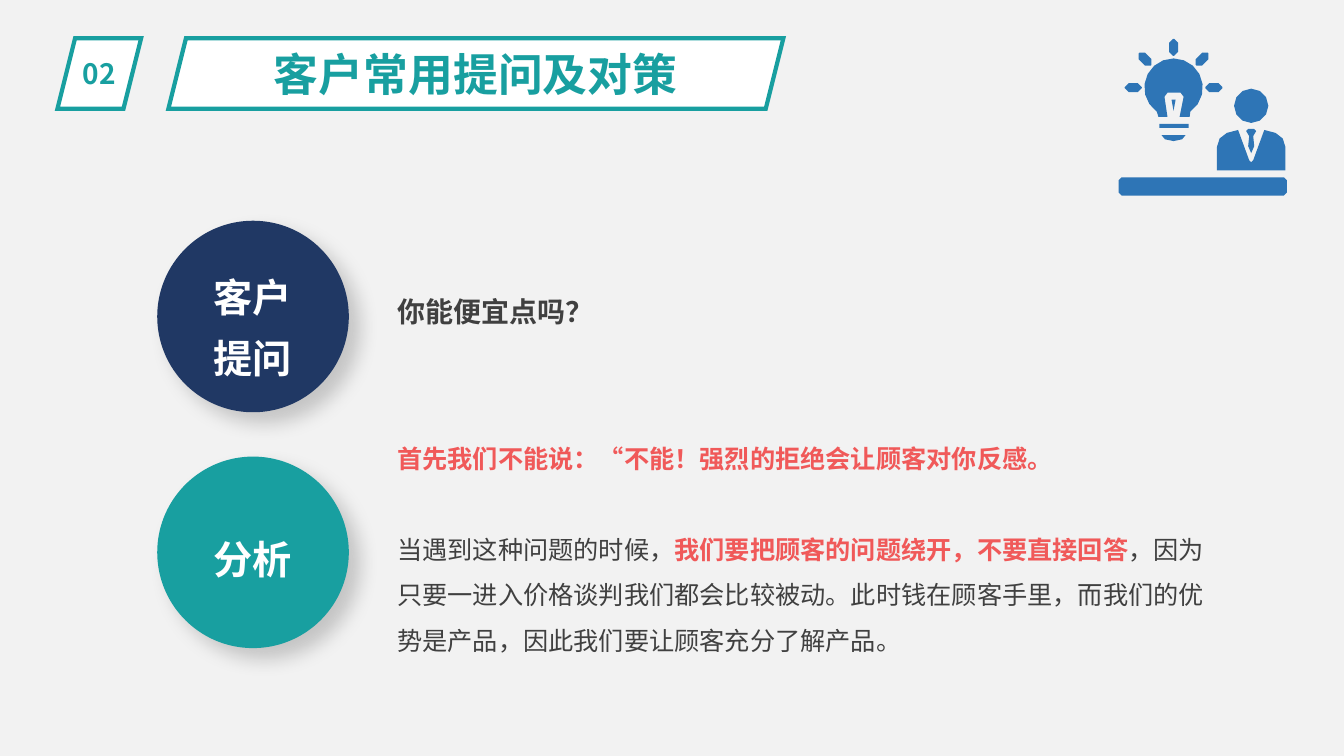
"""Build a slide on a common customer question and how to answer it."""
import math
from dataclasses import dataclass

import lxml.etree
import pptx
import pptx.dml.color
import pptx.enum.lang
import pptx.enum.shapes
import pptx.enum.text
import pptx.oxml.ns
import pptx.util

Inches = pptx.util.Inches
Pt = pptx.util.Pt
qn = pptx.oxml.ns.qn
ShapeKind = pptx.enum.shapes.MSO_SHAPE
Align = pptx.enum.text.PP_ALIGN
Anchor = pptx.enum.text.MSO_ANCHOR

FONT = "Noto Sans CJK SC"
NAVY, TEAL, RED, GREY, WHITE, BLUE = "203864", "189FA0", "F05959", "404040", "FFFFFF", "2E75B6"
Point = tuple[float, float]


@dataclass
class Box:
    left: float
    top: float
    width: float
    height: float

    def lengths(self) -> list:
        return [Inches(v) for v in (self.left, self.top, self.width, self.height)]


@dataclass
class Span:
    text: str
    color: str
    bold: bool = True


@dataclass
class Badge:
    lines: list[str]
    color: str
    circle: Box
    label: Box


BADGES = [
    Badge(["客户", "提问"], NAVY, Box(1.56, 2.19, 1.9, 1.9), Box(2.01, 2.52, 0.99, 1.27)),
    Badge(["分析"], TEAL, Box(1.56, 4.53, 1.9, 1.9), Box(2.01, 5.12, 0.99, 0.65)),
]
NUMBER_BOX = Box(0.57, 0.38, 0.83, 0.7)
TITLE_BOX = Box(1.67, 0.38, 6.1, 0.7)
ANALYSIS = [
    [Span("首先我们不能说：“不能！强烈的拒绝会让顾客对你反感。", RED)],
    [
        Span("当遇到这种问题的时候，", GREY, False),
        Span("我们要把顾客的问题绕开，不要直接回答", RED),
        Span("，因为只要一进入价格谈判我们都会比较被动。此时钱在顾客手里，"
             "而我们的优势是产品，因此我们要让顾客充分了解产品。", GREY, False),
    ],
]


def rgb(color: str) -> pptx.dml.color.RGBColor:
    return pptx.dml.color.RGBColor.from_string(color)


def write(shape, paragraphs: list[list[Span]], size: float, spacing: float = 1,
          align=Align.LEFT, anchor=Anchor.TOP, wrap: bool = True) -> None:
    frame = shape.text_frame
    frame.word_wrap, frame.vertical_anchor = wrap, anchor
    frame.auto_size = pptx.enum.text.MSO_AUTO_SIZE.NONE
    for index, spans in enumerate(paragraphs):
        paragraph = frame.add_paragraph() if index else frame.paragraphs[0]
        paragraph.alignment, paragraph.line_spacing = align, spacing
        paragraph.space_before = Pt(0)
        for span in spans:
            run = paragraph.add_run()
            run.text = span.text
            font = run.font
            font.name, font.size, font.bold = FONT, Pt(size), span.bold
            font.color.rgb = rgb(span.color)
            font.language_id = pptx.enum.lang.MSO_LANGUAGE_ID.SIMPLIFIED_CHINESE
            properties = run._r.get_or_add_rPr()
            lxml.etree.SubElement(properties, qn("a:ea"), typeface=FONT)


def paint(shape, fill: str) -> None:
    shape.shadow.inherit = False
    shape.fill.solid()
    shape.fill.fore_color.rgb = rgb(fill)
    shape.line.fill.background()


def add_badge(slide, badge: Badge) -> None:
    group = slide.shapes.add_group_shape()
    circle = group.shapes.add_shape(ShapeKind.OVAL, *badge.circle.lengths())
    paint(circle, badge.color)
    effects = circle._element.spPr.find(qn("a:effectLst"))
    shadow = lxml.etree.SubElement(
        effects, qn("a:outerShdw"), blurRad=str(Pt(14)), dist=str(Pt(11)),
        dir=str(45 * 60000), algn="tl", rotWithShape="0")
    color = lxml.etree.SubElement(shadow, qn("a:srgbClr"), val="000000")
    lxml.etree.SubElement(color, qn("a:alpha"), val="18000")
    label = group.shapes.add_textbox(*badge.label.lengths())
    write(label, [[Span(line, WHITE)] for line in badge.lines], 28, 1.3, Align.CENTER)


def arc(x: float, y: float, rx: float, ry: float, start: int, end: int, steps: int) -> list[Point]:
    angles = [math.radians(start + (end - start) * i / steps) for i in range(steps + 1)]
    return [(x + rx * math.cos(a), y + ry * math.sin(a)) for a in angles]


def rounded(x: float, y: float, width: float, height: float, radius: float,
            turn: float = 0) -> list[Point]:
    dx, dy = width / 2 - radius, height / 2 - radius
    corners = [(dx, dy), (-dx, dy), (-dx, -dy), (dx, -dy)]
    points = [point for i, (cx, cy) in enumerate(corners)
              for point in arc(cx, cy, radius, radius, 90 * i, 90 * i + 90, 1)]
    cos, sin = math.cos(math.radians(turn)), math.sin(math.radians(turn))
    return [(x + px * cos - py * sin, y + px * sin + py * cos) for px, py in points]


def add_idea_icon(slide) -> None:
    bulb_x, bulb_y = 11.64, 0.87
    bulb = arc(bulb_x, bulb_y, 0.29, 0.29, 125, 415, 14) + [
        (11.8, 1.16), (11.7, 1.16), (11.74, 0.96), (11.71, 0.92),
        (11.58, 0.92), (11.55, 0.96), (11.58, 1.16), (11.49, 1.16)]
    filament = [(11.62, 0.99), (11.66, 0.99), (11.64, 1.1)]
    rays = [rounded(bulb_x + 0.4 * math.cos(math.radians(turn)),
                    bulb_y + 0.4 * math.sin(math.radians(turn)), 0.17, 0.09, 0.04, turn)
            for turn in range(180, 361, 45)]
    socket = [(11.5, 1.23), (11.79, 1.23), (11.79, 1.27), (11.5, 1.27)]
    tip = arc(bulb_x, 1.34, 0.12, 0.06, 0, 180, 4)
    head = arc(12.41, 1.05, 0.17, 0.17, 0, 330, 11)
    body = (arc(12.22, 1.46, 0.15, 0.15, 180, 250, 2)
            + [(12.28, 1.29), (12.39, 1.59), (12.41, 1.61), (12.43, 1.59), (12.54, 1.29)]
            + arc(12.6, 1.46, 0.15, 0.15, 290, 360, 2) + [(12.75, 1.69), (12.07, 1.69)])
    tie = [(12.38, 1.28), (12.44, 1.28), (12.46, 1.3), (12.43, 1.35), (12.44, 1.45),
           (12.41, 1.52), (12.38, 1.45), (12.39, 1.35), (12.36, 1.3)]
    desk = rounded(11.93, 1.85, 1.67, 0.18, 0.03)
    outlines = [[(Inches(x), Inches(y)) for x, y in outline]
                for outline in (desk, bulb, filament, *rays, socket, tip, head, body, tie)]
    builder = slide.shapes.build_freeform(*outlines[0][0])
    for index, outline in enumerate(outlines):
        if index:
            builder.move_to(*outline[0])
        builder.add_line_segments(outline[1:], close=True)
    paint(builder.convert_to_shape(), BLUE)


def place(slide, placeholder, box: Box) -> None:
    placeholder.left, placeholder.top, placeholder.width, placeholder.height = box.lengths()
    slide.shapes._spTree.append(placeholder._element)


def add_frame(slide, box: Box):
    frame = slide.shapes.add_shape(ShapeKind.PARALLELOGRAM, *box.lengths())
    paint(frame, WHITE)
    frame.line.color.rgb, frame.line.width = rgb(TEAL), Pt(3)
    lxml.etree.SubElement(frame.line._get_or_add_ln(), qn("a:miter"), lim="800000")
    return frame


def add_heading(slide) -> None:
    number = add_frame(slide, NUMBER_BOX)
    add_frame(slide, TITLE_BOX)
    title = slide.shapes.title
    place(slide, title, TITLE_BOX)
    for shape, text, size in ((number, "02", 20), (title, "客户常用提问及对策", 32)):
        write(shape, [[Span(text, TEAL)]], size, align=Align.CENTER, anchor=Anchor.MIDDLE)


def add_analysis(slide) -> None:
    body = slide.placeholders[1]
    place(slide, body, Box(3.84, 4.2, 8.36, 2.37))
    write(body, ANALYSIS, 18, 1.5)
    paragraphs = body.text_frame.paragraphs
    paragraphs[1].space_before = Pt(32.5)
    for paragraph in paragraphs:
        properties = paragraph._p.get_or_add_pPr()
        properties.set("marL", "0")
        properties.set("indent", "0")
        lxml.etree.SubElement(properties, qn("a:buNone"))


def main() -> None:
    presentation = pptx.Presentation()
    presentation.slide_width, presentation.slide_height = Inches(13.33), Inches(7.5)
    slide = presentation.slides.add_slide(presentation.slide_layouts[1])
    slide.background.fill.solid()
    slide.background.fill.fore_color.rgb = rgb("F2F2F2")
    for badge in BADGES:
        add_badge(slide, badge)
    add_heading(slide)
    question = slide.shapes.add_textbox(*Box(3.84, 2.71, 2.17, 0.55).lengths())
    write(question, [[Span("你能便宜点吗？", GREY)]], 20, 1.5, wrap=False)
    add_analysis(slide)
    add_idea_icon(slide)
    presentation.save("out.pptx")


if __name__ == "__main__":
    main()
